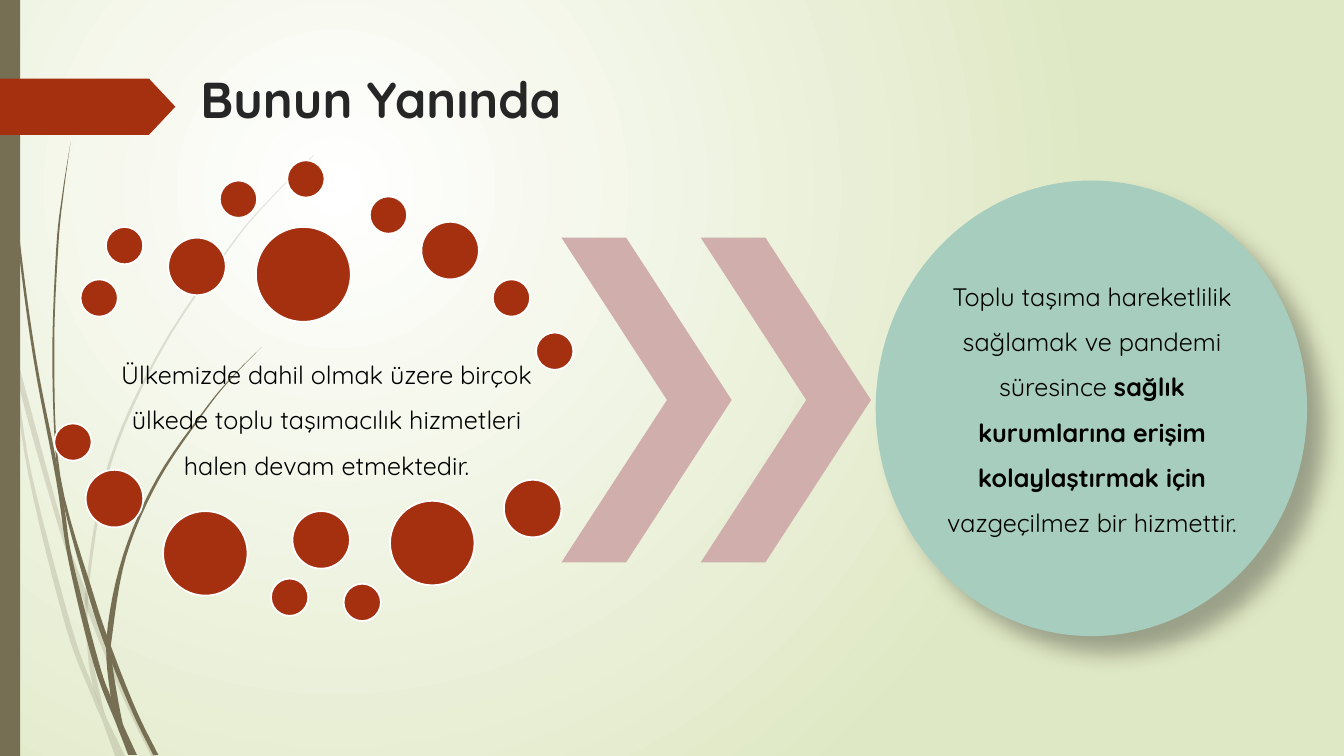
from pptx import Presentation, util as u
from pptx.dml.color import RGBColor
from pptx.enum import shapes, text
from pptx.oxml import parse_xml
from pptx.oxml.ns import nsdecls, qn

# Content, lengths in cm
FONT = "Quicksand"
HEX = {"white": "FFFFFF", "green": "DFE8C4", "olive": "766F54", "red": "A53010",
       "pink": "CFAEAB", "mint": "A6CDBD", "black": "000000", "dark": "262626"}
TITLE = [("Bunun Yanında", True)]
LEFT = [("Ülkemizde dahil olmak üzere birçok ülkede toplu taşımacılık "
         "hizmetleri halen devam etmektedir.", False)]
RIGHT = [("Toplu taşıma hareketlilik sağlamak ve pandemi süresince ", False),
         ("sağlık kurumlarına erişim kolaylaştırmak için ", True),
         ("vazgeçilmez bir hizmettir.", False)]

# Diameter: top left corners
DOTS = {
    0.94: [(2.03, 7.04), (2.67, 5.72), (5.54, 4.55), (7.24, 4.04), (9.32, 4.95),
           (12.42, 7.04), (13.51, 8.38), (1.37, 10.67), (6.83, 14.58), (8.66, 14.71)],
    1.45: [(4.24, 5.99), (10.62, 5.59), (2.16, 11.84), (7.37, 12.88), (12.7, 12.09)],
    2.13: [(4.11, 12.88), (9.83, 12.62)],
    2.39: [(6.45, 5.72)],
}

# Grass blades: opacity in percent, left edge, right edge, both from tip to root
BLADES = [
    (20, [(0.36, 8.76), (0.43, 9.55), (1.47, 13.26), (2.24, 15.49), (3.12, 17.63),
          (3.81, 19.05)],
     [(0.36, 8.76), (1.57, 13.21), (2.16, 14.88), (2.34, 15.42), (3.23, 17.58),
      (3.94, 19.05)]),
    (20, [(0, 7.59), (0.25, 8.74), (0.28, 8.89), (0.71, 11.94), (1.65, 15.77),
          (2.34, 17.6), (2.57, 18.14), (2.9, 19.05)],
     [(0, 7.16), (0.23, 8.18), (0.43, 9.55), (0.79, 11.91), (1.78, 15.72),
      (2.36, 17.35), (2.67, 18.06), (3.15, 19.05)]),
    (20, [(7.92, 3.89), (6.81, 5), (5.79, 6.2), (4.01, 8.84), (2.72, 11.71),
          (2.16, 14.83), (2.21, 16.41), (2.36, 17.35), (2.67, 18.06)],
     [(7.92, 3.91), (6.81, 5.03), (5.82, 6.22), (4.06, 8.86), (2.79, 11.73),
      (2.24, 14.83), (2.31, 16.41), (2.62, 17.93)]),
    (100, [(0.08, 0), (0.18, 2.79), (0.43, 5.92), (0.84, 9.02), (1.42, 12.12),
           (1.73, 14.15), (2.36, 16.74), (2.97, 18.34), (3.23, 19.02)],
     [(0.1, 0), (0.2, 2.77), (0.48, 5.89), (0.91, 9.02), (1.4, 11.51), (1.63, 12.83),
      (1.83, 14.12), (2.49, 16.69), (2.79, 17.55), (3.1, 18.26), (3.45, 19.02)]),
    (100, [(1.78, 3.58), (1.57, 4.9), (1.42, 6.22), (1.32, 8.86), (1.4, 11.4),
           (1.63, 12.83), (2.24, 15.04), (2.69, 16.38), (3.35, 17.98), (3.86, 19.02)],
     [(1.78, 3.58), (1.6, 4.9), (1.47, 6.22), (1.37, 8.86), (1.52, 11.99),
      (2.36, 14.99), (2.87, 16.48), (3.45, 17.93), (3.99, 19.02)]),
    (100, [(6.6, 8.74), (5.87, 9.47), (5.18, 10.29), (3.96, 12.04), (3.1, 14),
           (2.69, 16.03), (2.79, 17.55), (2.97, 18.34), (3.3, 19.02)],
     [(6.6, 8.74), (5.87, 9.5), (5.21, 10.31), (4.01, 12.09), (3.18, 14.02),
      (2.82, 16.08), (2.82, 16.66), (3.1, 18.26), (3.38, 19.02)]),
]

deck = Presentation()
deck.slide_width, deck.slide_height = u.Cm(33.87), u.Cm(19.05)
slide = deck.slides.add_slide(deck.slide_layouts[6])
KIND = shapes.MSO_SHAPE


def rgb(name):
    return RGBColor.from_string(HEX[name])


def paint(shape, color, edge=None):
    shape.shadow.inherit = False
    shape.fill.solid()
    shape.fill.fore_color.rgb = rgb(color)
    if edge:
        shape.line.color.rgb = rgb(edge)
        shape.line.width = u.Pt(1.25)
    else:
        shape.line.fill.background()


def put(kind, box, color, edge=None):
    shape = slide.shapes.add_shape(kind, *map(u.Cm, box))
    paint(shape, color, edge)
    return shape


def write(box, parts, size, color, pad=None, body=True):
    frame = slide.shapes.add_textbox(*map(u.Cm, box)).text_frame
    frame.word_wrap = True
    if pad is not None:
        frame.margin_left = frame.margin_right = u.Cm(pad)
        frame.margin_top = frame.margin_bottom = u.Cm(pad)
    para = frame.paragraphs[0]
    if body:
        frame.vertical_anchor = text.MSO_ANCHOR.MIDDLE
        para.alignment = text.PP_ALIGN.CENTER
        para.line_spacing = 1.5
    for words, bold in parts:
        run = para.add_run()
        run.text = words
        run.font.name, run.font.size, run.font.bold = FONT, u.Pt(size), bold
        run.font.color.rgb = rgb(color)


def smooth(pts, steps=6):
    """Catmull-Rom curve through the points."""
    ends = [pts[0], *pts, pts[-1]]
    out = []
    for a, b, c, d in zip(ends, ends[1:], ends[2:], ends[3:]):
        for t in (i / steps for i in range(steps)):
            out.append(tuple(
                q + t * (r - p) / 2 + t**2 * (2 * p - 5 * q + 4 * r - s) / 2
                + t**3 * (3 * q - p - 3 * r + s) / 2
                for p, q, r, s in zip(a, b, c, d)))
    return out + [pts[-1]]


# Background: radial glow
fill = slide.background.fill
fill.gradient()
for stop, name in zip(fill.gradient_stops, ("white", "green")):
    stop.color.rgb = rgb(name)
grad = slide._element.find(".//" + qn("a:gradFill"))
grad.replace(grad.find(qn("a:lin")), parse_xml(
    f'<a:path {nsdecls("a")} path="circle">'
    '<a:fillToRect l="50000" t="50000" r="100000" b="100000"/></a:path>'))

# Grass
for opacity, near, far in BLADES:
    edge = [(u.Cm(x), u.Cm(y)) for x, y in smooth(near) + smooth(far)[::-1]]
    pen = slide.shapes.build_freeform(*edge[0])
    pen.add_line_segments(edge[1:], close=True)
    blade = pen.convert_to_shape()
    paint(blade, "olive")
    if opacity < 100:
        tint = blade._element.spPr.find(".//" + qn("a:srgbClr"))
        tint.append(parse_xml(f'<a:alpha {nsdecls("a")} val="{opacity * 1000}"/>'))

# Side bar and title marker
put(KIND.RECTANGLE, (0, 0, 0.51, 19.05), "olive")
put(KIND.PENTAGON, (0, 1.98, 4.42, 1.42), "red").adjustments[0] = 0.47

# Left statement in a ring of dots
write((2.39, 8.46, 11.68, 3.86), LEFT, 18, "black", pad=0.08)
for size, spots in DOTS.items():
    for x, y in spots:
        put(KIND.OVAL, (x, y, size, size), "red", "white")

# Two chevrons
for i in range(2):
    arrow = put(KIND.CHEVRON, (14.15 + 3.51 * i, 5.99, 4.29, 8.18), "pink")
    arrow.adjustments[0] = 0.62

# Right statement on a shaded disc
disc = put(KIND.OVAL, (22.07, 4.55, 10.87, 11.48), "mint")
disc._element.spPr.find(qn("a:effectLst")).append(parse_xml(
    f'<a:outerShdw {nsdecls("a")} blurRad="{u.Pt(15)}" dist="{u.Pt(18)}" '
    f'dir="2700000" algn="tl" rotWithShape="0"><a:srgbClr val="{HEX["black"]}">'
    '<a:alpha val="30000"/></a:srgbClr></a:outerShdw>'))
write((23.67, 6.06, 7.7, 8.13), RIGHT, 18, "black", pad=0)

# Title
write((4.8, 1.6, 24.77, 3.56), TITLE, 36, "dark", body=False)

deck.save("out.pptx")
